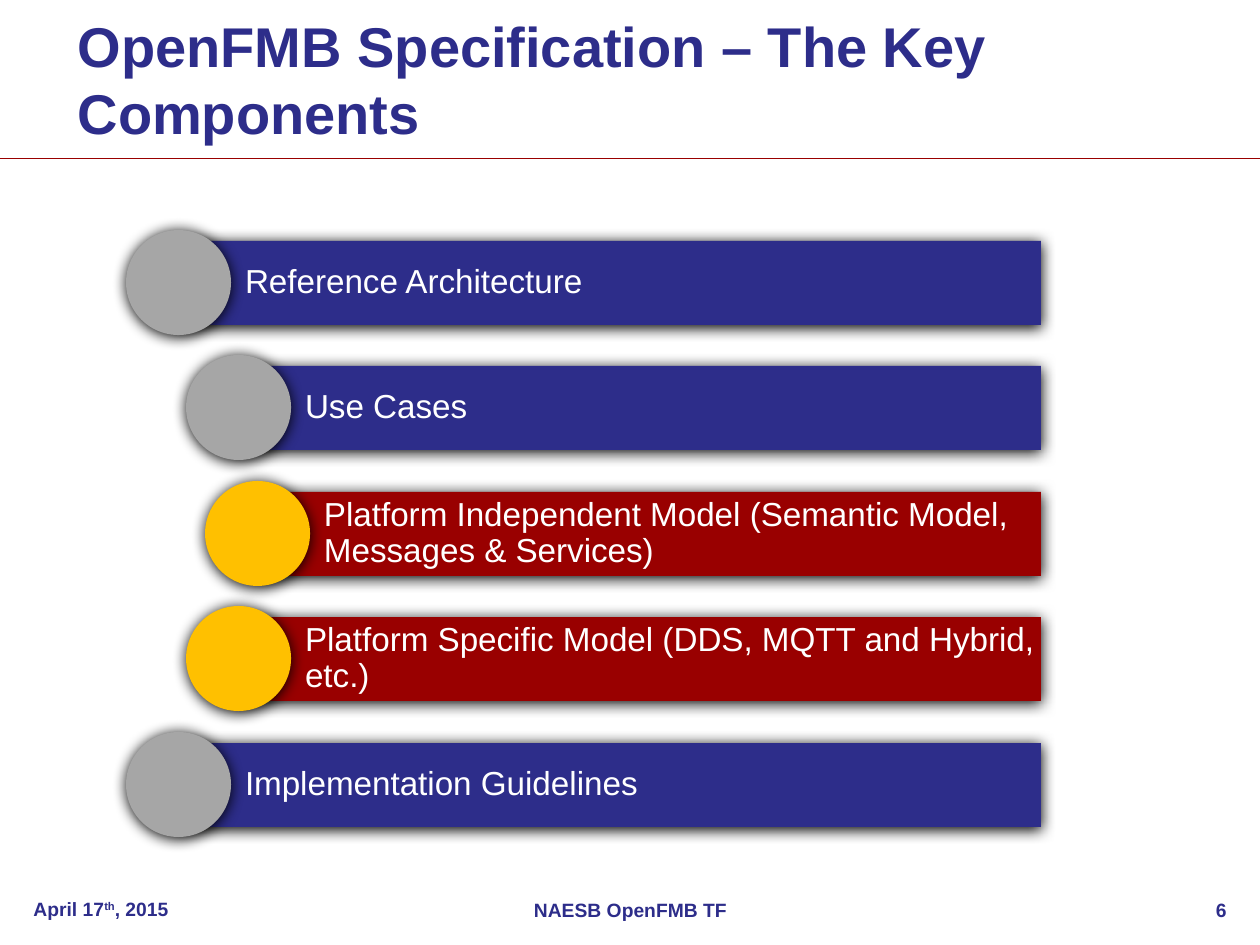
from lxml.etree import SubElement
from pptx import Presentation
from pptx.dml.color import RGBColor
from pptx.enum.shapes import MSO_CONNECTOR as Connector, MSO_SHAPE as Shape
from pptx.enum.text import MSO_ANCHOR as Anchor, PP_ALIGN as Align
from pptx.oxml.ns import qn
from pptx.util import Emu, Pt

COLORS = {"navy": "2D2D8A", "red": "990000", "gray": "A6A6A6",
          "gold": "FFC000", "white": "FFFFFF", "black": "000000"}


def px(length):
    return Emu(round(length * 914400 / 126))


def add_shadowed(page, kind, left, top, width, height, color):
    """Add a borderless filled shape with a soft shadow below it."""
    shape = page.shapes.add_shape(kind, px(left), px(top), px(width), px(height))
    shape.fill.solid()
    shape.fill.fore_color.rgb = RGBColor.from_string(COLORS[color])
    shape.line.fill.background()
    shape.shadow.inherit = False
    effects = shape._element.spPr.find(qn("a:effectLst"))
    shadow = SubElement(effects, qn("a:outerShdw"), blurRad=str(Pt(8.5)),
                        dist=str(Pt(1)), dir="5400000", rotWithShape="0")
    SubElement(shadow, qn("a:srgbClr"), val=COLORS["black"])
    return shape


deck = Presentation()
deck.slide_width, deck.slide_height = px(1260), px(945)
page = deck.slides.add_slide(deck.slide_layouts[5])

# Title and the rule below it
title = page.shapes.title
title.left, title.top, title.width, title.height = px(65), px(0), px(1134), px(157)
title.text_frame.text = "OpenFMB Specification – The Key Components"
title.text_frame.vertical_anchor = Anchor.MIDDLE
para = title.text_frame.paragraphs[0]
para.alignment = Align.LEFT
para.font.name, para.font.size, para.font.bold = "Arial", Pt(32), True
para.font.color.rgb = RGBColor.from_string(COLORS["navy"])

rule = page.shapes.add_connector(Connector.STRAIGHT, px(0), px(158), px(1260), px(158))
rule.line.color.rgb = RGBColor.from_string(COLORS["red"])
rule.line.width = Pt(0.5)
SubElement(rule._element.spPr, qn("a:effectLst"))

# Components: evenly spaced bars, each led by a circle
components = [
    ("Reference Architecture", 126, "navy", "gray"),
    ("Use Cases", 186, "navy", "gray"),
    ("Platform Independent Model (Semantic Model, Messages & Services)", 205, "red", "gold"),
    ("Platform Specific Model (DDS, MQTT and Hybrid, etc.)", 186, "red", "gold"),
    ("Implementation Guidelines", 126, "navy", "gray"),
]
CIRCLE, BAR_HEIGHT, BAR_RIGHT = 105, 84, 1041
FIRST_TOP, LAST_TOP = 230, 732

for index, (label, left, bar_color, circle_color) in enumerate(components):
    top = FIRST_TOP + (LAST_TOP - FIRST_TOP) * index // (len(components) - 1)
    bar_left = left + CIRCLE // 2
    bar = add_shadowed(page, Shape.RECTANGLE, bar_left, top + (CIRCLE - BAR_HEIGHT) // 2 + 1,
                       BAR_RIGHT - bar_left, BAR_HEIGHT, bar_color)
    frame = bar.text_frame
    frame.word_wrap = True
    frame.vertical_anchor = Anchor.MIDDLE
    frame.margin_left = px(67)
    frame.margin_top = frame.margin_right = frame.margin_bottom = px(6)
    frame.text = label
    para = frame.paragraphs[0]
    para.alignment = Align.LEFT
    para.line_spacing = 0.9
    para.font.name, para.font.size = "Arial", Pt(19)
    para.font.color.rgb = RGBColor.from_string(COLORS["white"])
    add_shadowed(page, Shape.OVAL, left, top, CIRCLE, CIRCLE, circle_color)

# Footer: date, group and page number
footers = [
    (21, 891, 294, Align.LEFT, ["April 17", "th", ", 2015"]),
    (431, 892, 399, Align.CENTER, ["NAESB OpenFMB TF"]),
    (955, 892, 284, Align.RIGHT, ["6"]),
]
for left, top, width, alignment, texts in footers:
    box = page.shapes.add_textbox(px(left), px(top), px(width), px(52))
    box.text_frame.word_wrap = True
    para = box.text_frame.paragraphs[0]
    para.alignment = alignment
    para.font.name, para.font.size, para.font.bold = "Arial", Pt(11), True
    para.font.color.rgb = RGBColor.from_string(COLORS["navy"])
    for text in texts:
        span = para.add_run()
        span.text = text
        if text == "th":
            span._r.get_or_add_rPr().set("baseline", "30000")

deck.save("out.pptx")
